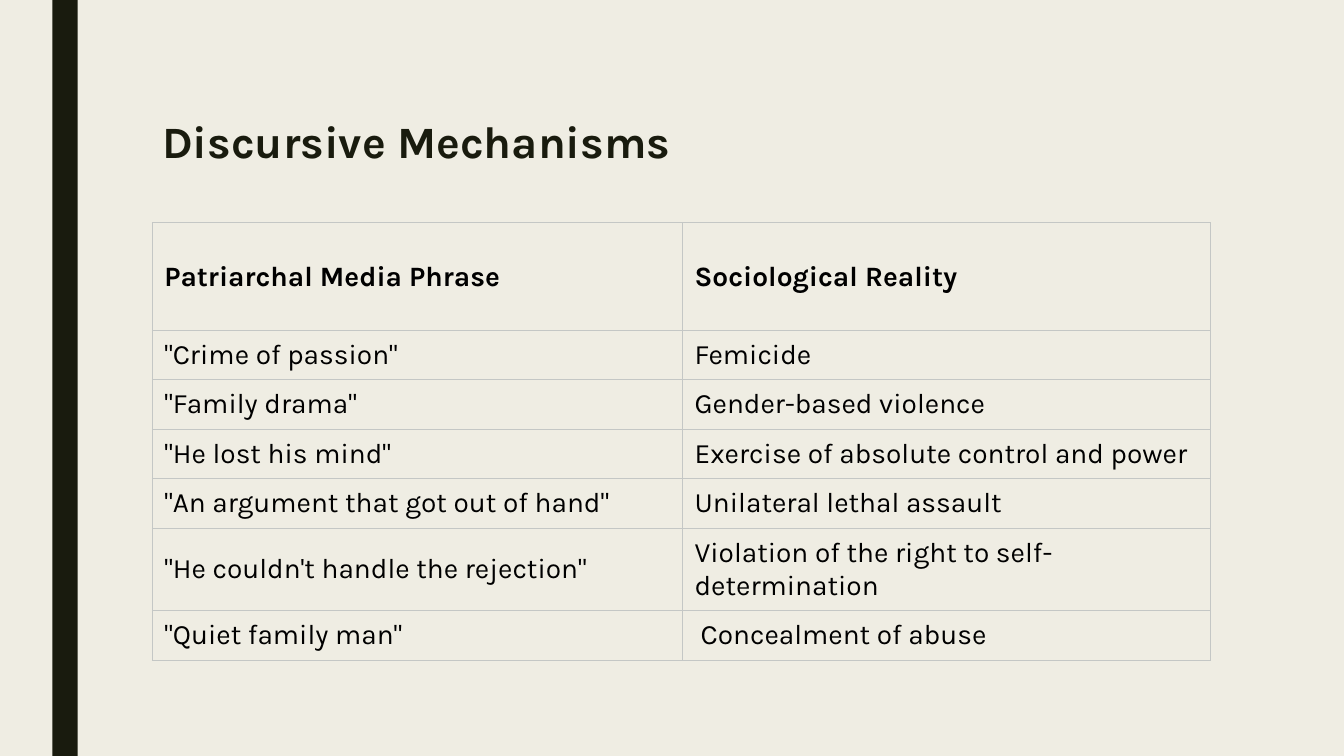
from lxml.etree import SubElement
from pptx import Presentation
from pptx.dml.color import RGBColor
from pptx.enum.shapes import MSO_SHAPE
from pptx.enum.text import MSO_ANCHOR
from pptx.oxml.ns import qn
from pptx.util import Inches, Pt

CREAM = RGBColor(0xEF, 0xED, 0xE3)
DARK_OLIVE = RGBColor(0x19, 0x1B, 0x0E)
BLACK = RGBColor(0x00, 0x00, 0x00)
BORDER_GREY = RGBColor(0xC4, 0xC7, 0xC5)

FONT = "Karla"
COLUMN_WIDTHS = (5.26, 5.24)
HEADER_HEIGHT = 1.07
LINE_HEIGHT = 0.33
CELL_FORMAT = {
    "vertical_anchor": MSO_ANCHOR.MIDDLE,
    "margin_left": Inches(0.12),
    "margin_right": Inches(0.12),
    "margin_top": Inches(0.08),
    "margin_bottom": Inches(0.08),
}
ROWS = [
    ("Patriarchal Media Phrase", "Sociological Reality"),
    ('"Crime of passion"', "Femicide"),
    ('"Family drama"', "Gender-based violence"),
    ('"He lost his mind"', "Exercise of absolute control and power"),
    ('"An argument that got out of hand"', "Unilateral lethal assault"),
    ('"He couldn\'t handle the rejection"',
     "Violation of the right to self-determination"),
    ('"Quiet family man"', "Concealment of abuse"),
]
TWO_LINE_ROW = 5
LAST_CELL_INDENT = 0.06


def set_attributes(target, values):
    for name, value in values.items():
        setattr(target, name, value)


def write_text(paragraph, text, size, color, bold):
    span = paragraph.add_run()
    span.text = text
    set_attributes(span.font, {"name": FONT, "size": Pt(size), "bold": bold})
    span.font.color.rgb = color


def add_side_bar(page):
    bar = page.shapes.add_shape(
        MSO_SHAPE.RECTANGLE, Inches(0.52), Inches(0), Inches(0.25), Inches(7.5))
    bar.shadow.inherit = False
    bar.fill.solid()
    bar.fill.fore_color.rgb = DARK_OLIVE
    bar.line.fill.background()


def add_title(page, text):
    box = page.shapes.add_textbox(
        Inches(1.51), Inches(1.14), Inches(11.56), Inches(1.62))
    box.text_frame.word_wrap = True
    paragraph = box.text_frame.paragraphs[0]
    paragraph.line_spacing = 0.89
    write_text(paragraph, text, 32, DARK_OLIVE, True)


def add_borders(cell):
    """Draw all four cell edges; they must precede the fill in the XML."""
    properties = cell._tc.get_or_add_tcPr()
    for position, side in enumerate(("lnL", "lnR", "lnT", "lnB")):
        edge = SubElement(properties, qn(f"a:{side}"), w=str(Pt(0.75)))
        fill = SubElement(edge, qn("a:solidFill"))
        SubElement(fill, qn("a:srgbClr"), val=str(BORDER_GREY))
        properties.insert(position, edge)


def fill_cell(cell, text, bold):
    set_attributes(cell, CELL_FORMAT)
    cell.fill.background()
    add_borders(cell)
    write_text(cell.text_frame.paragraphs[0], text, 20, BLACK, bold)


def row_height(index):
    if index == 0:
        return HEADER_HEIGHT
    lines = 2 if index == TWO_LINE_ROW else 1
    return 0.16 + lines * LINE_HEIGHT


def add_phrase_table(page):
    heights = [row_height(index) for index in range(len(ROWS))]
    frame = page.shapes.add_table(
        len(ROWS), len(COLUMN_WIDTHS), Inches(1.51), Inches(2.21),
        Inches(sum(COLUMN_WIDTHS)), Inches(sum(heights)))
    table = frame.table
    set_attributes(table, {"first_row": False, "horz_banding": False})
    for column, width in zip(table.columns, COLUMN_WIDTHS):
        column.width = Inches(width)
    for index, (row, texts) in enumerate(zip(table.rows, ROWS)):
        row.height = Inches(heights[index])
        for cell, text in zip(row.cells, texts):
            fill_cell(cell, text, bold=index == 0)
    last_cell = table.cell(len(ROWS) - 1, 1)
    last_cell.margin_left += Inches(LAST_CELL_INDENT)


def main():
    deck = Presentation()
    set_attributes(deck, {"slide_width": Inches(13.33),
                          "slide_height": Inches(7.5)})
    page = deck.slides.add_slide(deck.slide_layouts[6])
    page.background.fill.solid()
    page.background.fill.fore_color.rgb = CREAM
    add_side_bar(page)
    add_phrase_table(page)
    add_title(page, "Discursive Mechanisms")
    deck.save("out.pptx")


if __name__ == "__main__":
    main()
